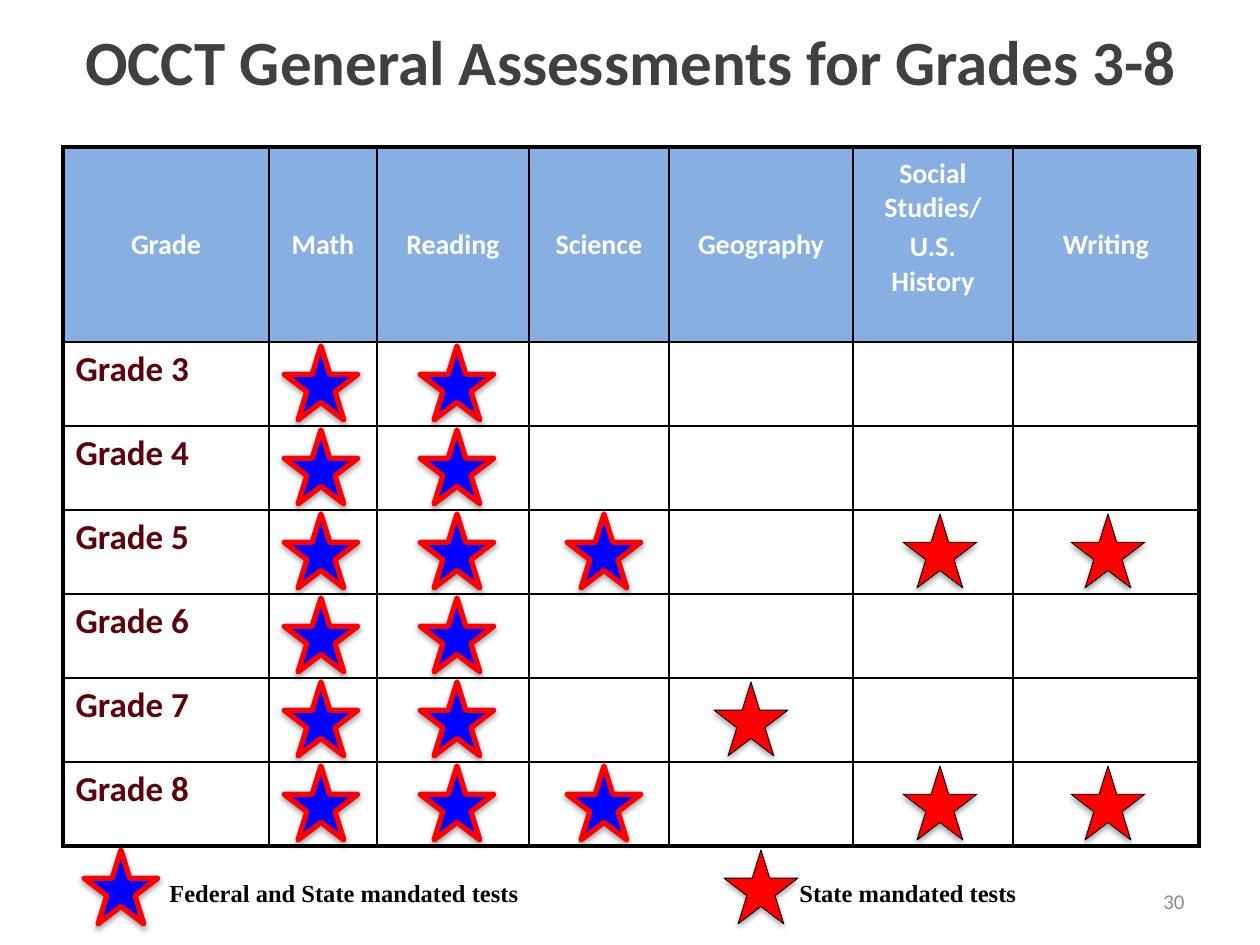
from dataclasses import dataclass

import lxml.etree
import pptx
import pptx.dml.color
import pptx.enum.shapes
import pptx.enum.text
import pptx.oxml.ns
import pptx.util

EMU_PER_PX = 914400 / 126
COLORS = {
    "black": "000000",
    "white": "FFFFFF",
    "title": "404040",
    "header": "558ED5",
    "grade": "5D030B",
    "number": "8C8C8C",
    "blue": "0000FF",
    "red": "FF0000",
}
ALIGN = pptx.enum.text.PP_ALIGN
ANCHOR = pptx.enum.text.MSO_ANCHOR

# Table grid, in px
TABLE_LEFT, TABLE_TOP = 63, 147
COLUMN_WIDTHS = [206, 108, 152, 140, 184, 160, 186]
HEADER_HEIGHT, ROW_HEIGHT = 195, 84
HEADERS = ["Grade", "Math", "Reading", "Science", "Geography",
           "Social Studies/\nU.S. History", "Writing"]
GRADES = range(3, 9)

# Star grid, in px
STAR_SIZE = 74
FIRST_STAR_TOP = 346
LEGEND_STAR_TOP = 850


@dataclass(frozen=True)
class StarStyle:
    fill: str
    line: str
    line_width: float


@dataclass(frozen=True)
class Subject:
    left: int
    grades: tuple[int, ...]
    style: StarStyle


@dataclass(frozen=True)
class Label:
    text: str
    left: int
    top: int
    width: int
    height: int
    size: int
    color: str
    font: str = "Calibri"
    bold: bool = True
    align: ALIGN = ALIGN.LEFT
    anchor: ANCHOR = ANCHOR.TOP
    line_spacing: float = 1.0


FEDERAL = StarStyle("blue", "red", 3)
STATE = StarStyle("red", "black", 0.5)
SUBJECTS = [
    Subject(284, tuple(GRADES), FEDERAL),
    Subject(420, tuple(GRADES), FEDERAL),
    Subject(567, (5, 8), FEDERAL),
    Subject(714, (7,), STATE),
    Subject(903, (5, 8), STATE),
    Subject(1071, (5, 8), STATE),
]
LEGEND_STARS = [(84, FEDERAL), (724, STATE)]
LABELS = [
    Label("Federal and State mandated tests", 157, 872, 426, 43, 14, "black",
          "Times New Roman"),
    Label("State mandated tests", 787, 872, 274, 43, 14, "black",
          "Times New Roman"),
    Label("OCCT General Assessments for Grades 3-8", 1, 31, 1260, 189, 36,
          "title", align=ALIGN.CENTER, line_spacing=0.8),
    Label("30", 903, 876, 294, 50, 12, "number", bold=False,
          align=ALIGN.RIGHT, anchor=ANCHOR.MIDDLE),
]


def px(length: int) -> pptx.util.Emu:
    return pptx.util.Emu(round(length * EMU_PER_PX))


def rgb(name: str) -> pptx.dml.color.RGBColor:
    return pptx.dml.color.RGBColor.from_string(COLORS[name])


def add_element(parent, tag: str, **attributes):
    element = lxml.etree.SubElement(parent, pptx.oxml.ns.qn(tag))
    for name, value in attributes.items():
        element.set(name, str(value))
    return element


def format_text(text_frame, size: int, color: str, align: ALIGN,
                font: str = "Calibri", bold: bool = True,
                line_spacing: float = 1.0) -> None:
    for index, paragraph in enumerate(text_frame.paragraphs):
        paragraph.alignment = align
        paragraph.line_spacing = line_spacing
        if index:
            paragraph.space_before = pptx.util.Pt(3)
        for run in paragraph.runs:
            run.font.name = font
            run.font.size = pptx.util.Pt(size)
            run.font.bold = bold
            run.font.color.rgb = rgb(color)


def add_label(slide, label: Label) -> None:
    box = slide.shapes.add_textbox(px(label.left), px(label.top),
                                   px(label.width), px(label.height))
    text_frame = box.text_frame
    text_frame.word_wrap = True
    text_frame.vertical_anchor = label.anchor
    text_frame.text = label.text
    format_text(text_frame, label.size, label.color, label.align, label.font,
                label.bold, label.line_spacing)


def add_star(slide, left: int, top: int, style: StarStyle) -> None:
    star = slide.shapes.add_shape(
        pptx.enum.shapes.MSO_SHAPE.STAR_5_POINT,
        px(left), px(top), px(STAR_SIZE), px(STAR_SIZE))
    star.fill.solid()
    star.fill.fore_color.rgb = rgb(style.fill)
    star.line.color.rgb = rgb(style.line)
    star.line.width = pptx.util.Pt(style.line_width)
    properties = star._element.spPr
    add_element(properties.find(pptx.oxml.ns.qn("a:ln")), "a:round")
    # Soft shadow below the star
    star.shadow.inherit = False
    effects = properties.find(pptx.oxml.ns.qn("a:effectLst"))
    shadow = add_element(effects, "a:outerShdw", blurRad=40000, dist=23000,
                         dir=5400000, rotWithShape=0)
    color = add_element(shadow, "a:srgbClr", val=COLORS["black"])
    add_element(color, "a:alpha", val=35000)


def set_borders(cell, outer_sides: dict[str, bool]) -> None:
    properties = cell._tc.get_or_add_tcPr()
    for index, (side, is_outer) in enumerate(outer_sides.items()):
        width = pptx.util.Pt(2.25 if is_outer else 1)
        line = add_element(properties, f"a:ln{side}", w=int(width))
        fill = add_element(line, "a:solidFill")
        add_element(fill, "a:srgbClr", val=COLORS["black"])
        properties.insert(index, line)


def add_assessment_table(slide) -> None:
    row_heights = [HEADER_HEIGHT] + [ROW_HEIGHT] * len(GRADES)
    table = slide.shapes.add_table(
        len(row_heights), len(COLUMN_WIDTHS), px(TABLE_LEFT), px(TABLE_TOP),
        px(sum(COLUMN_WIDTHS)), px(sum(row_heights))).table
    table.first_row = table.horz_banding = False
    for column, width in zip(table.columns, COLUMN_WIDTHS):
        column.width = px(width)
    for row, height in zip(table.rows, row_heights):
        row.height = px(height)

    # Header row
    for column_index, header in enumerate(HEADERS):
        cell = table.cell(0, column_index)
        cell.text_frame.text = header
        cell.vertical_anchor = ANCHOR.MIDDLE
        format_text(cell.text_frame, 16, "white", ALIGN.CENTER)
        cell.fill.solid()
        cell.fill.fore_color.rgb = rgb("header")
        for color in cell._tc.tcPr.iter(pptx.oxml.ns.qn("a:srgbClr")):
            add_element(color, "a:alpha", val=70000)
        if "\n" in header:
            cell.margin_bottom = px(40)

    # Grade rows
    for row_index, grade in enumerate(GRADES, start=1):
        cell = table.cell(row_index, 0)
        cell.text_frame.text = f"Grade {grade}"
        format_text(cell.text_frame, 20, "grade", ALIGN.LEFT)
        for column_index in range(len(COLUMN_WIDTHS)):
            table.cell(row_index, column_index).fill.background()

    # Thick frame, thin inner lines
    last_row, last_column = len(row_heights) - 1, len(COLUMN_WIDTHS) - 1
    for row_index in range(last_row + 1):
        for column_index in range(last_column + 1):
            set_borders(table.cell(row_index, column_index), {
                "L": column_index == 0, "R": column_index == last_column,
                "T": row_index == 0, "B": row_index == last_row})


def main() -> None:
    presentation = pptx.Presentation()
    presentation.slide_width, presentation.slide_height = px(1260), px(945)
    slide = presentation.slides.add_slide(presentation.slide_layouts[6])

    add_assessment_table(slide)
    for label in LABELS:
        add_label(slide, label)

    # Stars for each tested subject, then the legend
    for subject in SUBJECTS:
        for grade in subject.grades:
            top = FIRST_STAR_TOP + ROW_HEIGHT * GRADES.index(grade)
            add_star(slide, subject.left, top, subject.style)
    for left, style in LEGEND_STARS:
        add_star(slide, left, LEGEND_STAR_TOP, style)

    presentation.save("out.pptx")


if __name__ == "__main__":
    main()
